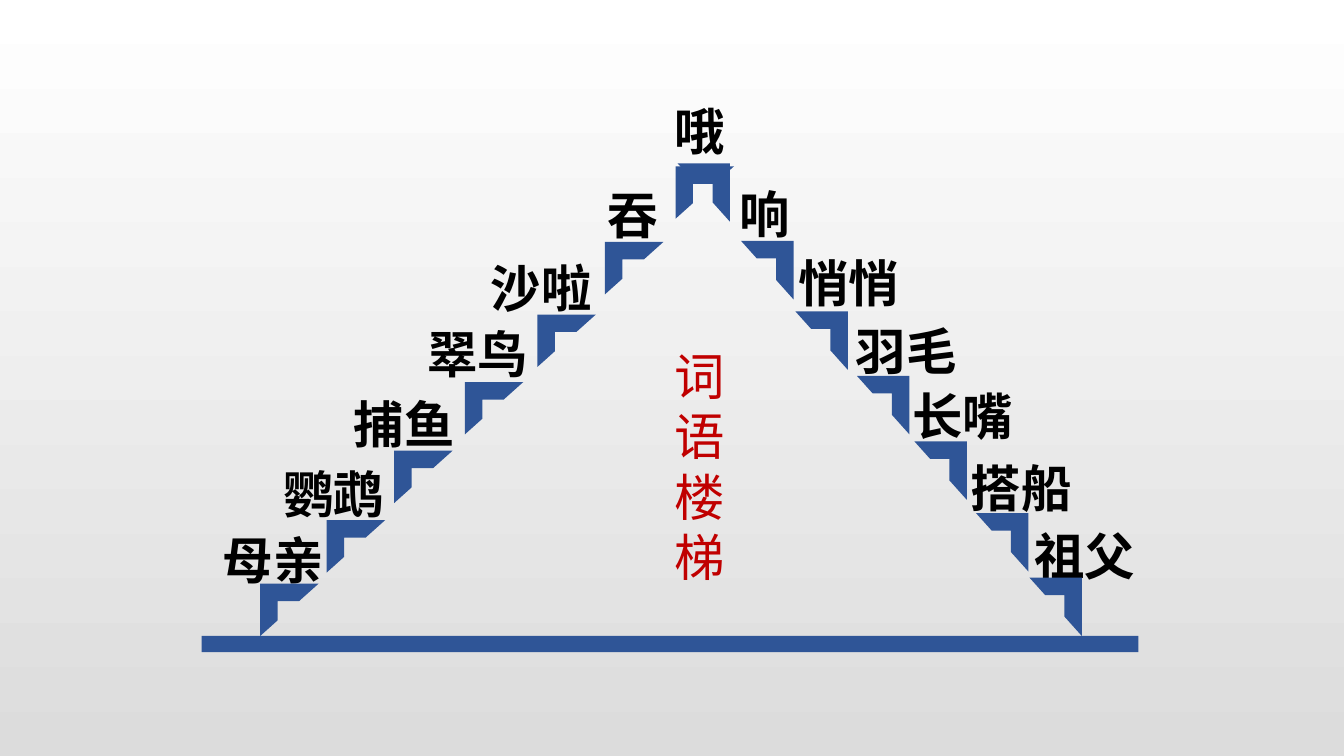
"""Build a slide with a staircase of words climbing to a peak."""
from pptx import Presentation
from pptx.dml.color import RGBColor
from pptx.enum import shapes, text
from pptx.oxml.ns import qn
from pptx.util import Inches, Pt

FONT = "Noto Sans CJK SC"
INK = {"step": "2F5597", "word": "000000", "title": "C00000",
       "top": "FFFFFF", "base": "DCDCDC"}
TITLE = "词语楼梯"
WORDS = [
    ("母亲", 2.11, 5.2), ("鹦鹉", 2.71, 4.54), ("捕鱼", 3.41, 3.85),
    ("翠鸟", 4.14, 3.16), ("沙啦", 4.77, 2.5), ("吞", 5.93, 1.78),
    ("哦", 6.59, 0.94), ("响", 7.24, 1.77), ("悄悄", 7.82, 2.45),
    ("羽毛", 8.39, 3.13), ("长嘴", 8.95, 3.77), ("搭船", 9.53, 4.49),
    ("祖父", 10.16, 5.16),
]
STEPS = {
    0: [(2.58, 5.79), (3.24, 5.16), (3.91, 4.47), (4.61, 3.79),
        (5.33, 3.12), (6, 2.4), (6.7, 1.65)],
    90: [(6.69, 1.65), (7.32, 2.42), (7.86, 3.12), (8.47, 3.76),
         (9.04, 4.41), (9.65, 5.12), (10.18, 5.76)],
}
FLOOR = (2, 6.31, 9.29, 0.16)
STEP_W, STEP_H = 0.58, 0.52
CHAR_W, PAD, WORD_H = 0.5, 0.2, 0.71


def color(name):
    return RGBColor.from_string(INK[name])


def write(box, words, ink, bold):
    frame = box.text_frame
    frame.vertical_anchor = text.MSO_ANCHOR.TOP
    frame.auto_size = text.MSO_AUTO_SIZE.NONE
    para = frame.paragraphs[0]
    para.alignment = text.PP_ALIGN.LEFT
    run = para.add_run()
    run.text = words
    font = run.font
    font.name, font.size, font.bold = FONT, Pt(36), bold
    font.color.rgb = color(ink)
    east = run._r.get_or_add_rPr().makeelement(qn("a:ea"), {"typeface": FONT})
    run._r.rPr.find(qn("a:latin")).addnext(east)
    return frame


def block(slide, kind, x, y, w, h, turn=0):
    shape = slide.shapes.add_shape(kind, *map(Inches, (x, y, w, h)))
    shape.rotation = turn
    shape.shadow.inherit = False
    shape.fill.solid()
    shape.fill.fore_color.rgb = color("step")
    shape.line.fill.background()


def main():
    deck = Presentation()
    deck.slide_width, deck.slide_height = Inches(13.33), Inches(7.5)
    slide = deck.slides.add_slide(deck.slide_layouts[5])

    fill = slide.background.fill
    fill.gradient()
    fill.gradient_angle = 270
    for stop, name in zip(fill.gradient_stops, ("top", "base")):
        stop.color.rgb = color(name)

    title = slide.shapes.title
    title.left, title.top = Inches(6.59), Inches(3.37)
    title.width, title.height = Inches(0.95), Inches(2.52)
    write(title, TITLE, "title", False).word_wrap = True

    for word, x, y in WORDS:
        size = (x, y, CHAR_W * len(word) + PAD, WORD_H)
        box = slide.shapes.add_textbox(*map(Inches, size))
        write(box, word, "word", True).word_wrap = False

    block(slide, shapes.MSO_SHAPE.RECTANGLE, *FLOOR)
    for turn, spots in STEPS.items():
        for x, y in spots:
            block(slide, shapes.MSO_SHAPE.HALF_FRAME, x, y, STEP_W, STEP_H, turn)

    deck.save("out.pptx")


if __name__ == "__main__":
    main()
